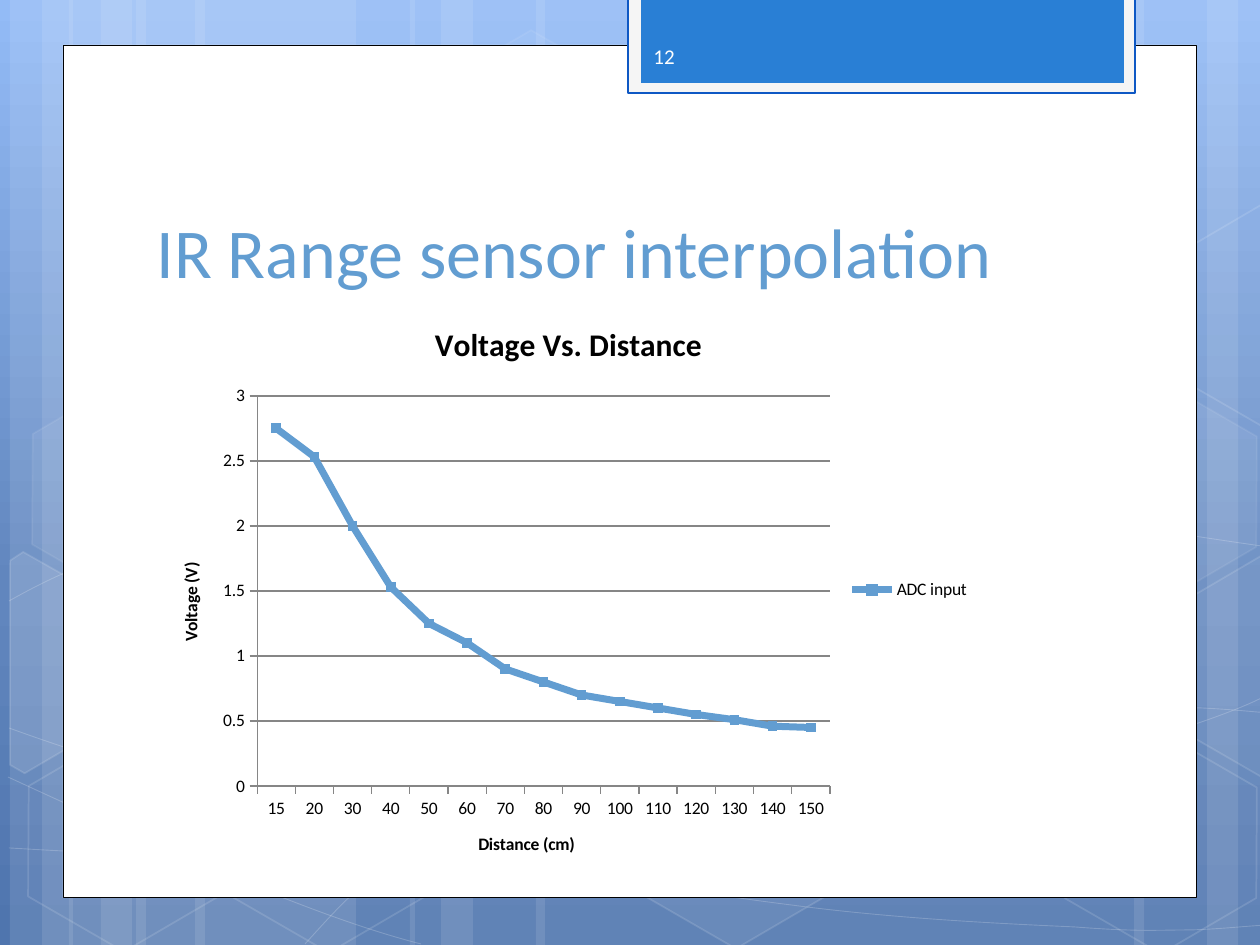
import copy
import dataclasses
import pptx
import pptx.chart.data
import pptx.dml.color
import pptx.enum.chart
import pptx.enum.shapes
import pptx.enum.text
import pptx.oxml.ns
import pptx.util


@dataclasses.dataclass
class Theme:
    sky: tuple = ((0, "93BBF6"), (0.62, "6186BE"), (1, "4F75AE"))
    white: str = "FFFFFF"
    black: str = "000000"
    frame: str = "F5F5F5"
    edge: str = "0E58C4"
    tab: str = "297FD5"
    page: str = "FEFEFE"
    accent: str = "629DD1"
    grid: str = "868686"
    font: str = "Calibri"
    head: int = 40
    name: int = 18
    num: int = 12
    small: int = 10


theme = Theme()
PX = 914400 / 126
RGB = pptx.dml.color.RGBColor.from_string
KIND = pptx.enum.shapes.MSO_SHAPE
ANCHOR = pptx.enum.text.MSO_ANCHOR
qn = pptx.oxml.ns.qn


def write(frame, text, size, color, bold=False, anchor=None):
    frame.text = text
    para = frame.paragraphs[0]
    if anchor is not None:
        frame.word_wrap = True
        frame.vertical_anchor = anchor
        para.alignment = pptx.enum.text.PP_ALIGN.LEFT
    font = para.runs[0].font
    font.name, font.size, font.bold = theme.font, pptx.util.Pt(size), bold
    font.color.rgb = RGB(color)


def paint(shape, fill=None, alpha=100, line=None, width=1, fade=100):
    shape.shadow.inherit = False
    for part, color, share in ((shape.fill, fill, alpha), (shape.line.fill, line, fade)):
        if color is None or share == 0:
            part.background()
            continue
        part.solid()
        part.fore_color.rgb = RGB(color)
        if share < 100:
            root = shape._element.spPr if part is shape.fill else shape.line._ln
            tone = root.find(qn("a:solidFill")).find(qn("a:srgbClr"))
            tone.append(tone.makeelement(qn("a:alpha"), {"val": str(share * 1000)}))
    if line:
        shape.line.width = pptx.util.Pt(width)


deck = pptx.Presentation()
deck.slide_width, deck.slide_height = round(1260 * PX), round(945 * PX)
slide = deck.slides.add_slide(deck.slide_layouts[5])
shapes = slide.shapes

# Background gradient, top to bottom
back = slide.background.fill
back.gradient()
back.gradient_angle = 270
stops = slide._element.find(".//" + qn("a:gsLst"))
stops.append(copy.deepcopy(stops[-1]))
for stop, (pos, color) in zip(back.gradient_stops, theme.sky):
    stop.position = pos
    stop.color.rgb = RGB(color)

# Pale vertical bands: left, width
bands = [(136, 220), (10, 63), (42, 104), (195, 220), (69, 63), (101, 104),
         (924, 220), (1207, 63), (1134, 104), (536, 388), (410, 63), (441, 104)]
for left, wide in bands:
    band = shapes.add_shape(KIND.RECTANGLE, *(round(v * PX) for v in (left, 0, wide, 945)))
    band.rotation = 180 if left > 900 else 0
    paint(band, theme.white, alpha=10)

# Thin curves: a start, then cubic steps (two controls, end) or straight ones
curves = [
    ((9, 848), [(77, 852, 145, 856, 239, 854), (334, 853, 451, 851, 577, 838),
                (703, 825, 882, 801, 998, 777), (1113, 753, 1231, 716, 1269, 694)]),
    ((9, 601), [(45, 581, 82, 562, 152, 543), (224, 524, 326, 496, 437, 488),
                (549, 479, 685, 478, 824, 488), (963, 498, 1193, 537, 1269, 547)]),
    ((8, 777), [(160, 847, 311, 916, 421, 944)]),
    ((9, 728), [(48, 742, 88, 756, 161, 776), (234, 795, 344, 827, 450, 848),
                (554, 869, 687, 892, 791, 905), (896, 919, 1008, 924, 1075, 927),
                (1140, 932, 1158, 930, 1191, 930), (1223, 929, 1246, 926, 1269, 925)]),
    ((305, 944), [(328, 919, 350, 893, 381, 871), (412, 848, 454, 823, 489, 805),
                  (524, 788, 546, 780, 592, 767), (638, 754, 722, 737, 766, 728),
                  (811, 719, 818, 719, 857, 717), (896, 713, 958, 709, 1000, 708),
                  (1045, 707, 1116, 708, 1116, 708), (1201, 708),
                  (1223, 709, 1245, 711, 1256, 712), (1268, 713, 1264, 712, 1268, 713)]),
]
for start, steps in curves:
    pen = shapes.build_freeform(*start, scale=PX)
    pen.add_line_segments([dot for step in steps for dot in zip(step[::2], step[1::2])],
                          close=False)
    curve = pen.convert_to_shape()
    paint(curve, line=theme.white, width=0.5, fade=20)
    track = curve._element.find(".//" + qn("a:path"))
    lines = iter(track.findall(qn("a:lnTo")))
    for step in steps:
        legs = [next(lines) for _ in step[::2]]
        if len(legs) == 3:
            bend = track.makeelement(qn("a:cubicBezTo"), {})
            legs[0].addprevious(bend)
            for leg in legs:
                bend.append(leg[0])
                track.remove(leg)

# Hexagons: left, top, fill alpha, line alpha
cells = [(421, 45, 4, 8), (626, 742, 6, 12), (14, 745, 0, 12), (18, 393, 7, 8),
         (219, 746, 0, 12), (949, 571, 10, 12), (1051, 747, 0, 12), (1051, 396, 7, 8)]
for left, top, alpha, fade in cells:
    cell = shapes.add_shape(KIND.HEXAGON, *(round(v * PX) for v in (left, top, 220, 192)))
    cell.adjustments[0] = 0.285
    cell.rotation = 30
    paint(cell, theme.white, alpha=alpha, line=theme.white, fade=fade)

# Hexagons cut by the slide edge: left, top, fill alpha, outline
west = [(0, 15), (7, 1), (119, 0), (173, 97), (119, 192), (102, 192)]
east = [(0, 95), (54, 0), (66, 0), (171, 182), (166, 191), (55, 191)]
for left, top, alpha, dots in ((-42, 578, 10, west), (1155, 559, 4, east), (1155, 208, 0, east)):
    dots = [(left + x, top + y) for x, y in dots]
    pen = shapes.build_freeform(*dots[0], scale=PX)
    pen.add_line_segments(dots[1:], close=True)
    cell = pen.convert_to_shape()
    cell.rotation = 30
    paint(cell, theme.white, alpha=alpha, line=theme.white, fade=12)

# White page and the tab at its top
plates = [((63, 45, 1134, 853), theme.white, theme.black, 0.5),
          ((628, -2, 507, 95), theme.frame, theme.edge, 1.25),
          ((641, -2, 483, 85), theme.tab, None, 0)]
for place, fill, line, width in plates:
    plate = shapes.add_shape(KIND.RECTANGLE, *(round(v * PX) for v in place))
    paint(plate, fill, line=line, width=width)

# Title, moved in front of the page
title = shapes.title
shapes._spTree.append(title._element)
title.left, title.top, title.width, title.height = (
    round(v * PX) for v in (144, 141, 968, 158))
write(title.text_frame, "IR Range sensor interpolation", theme.head, theme.accent,
      anchor=ANCHOR.BOTTOM)

# Page number
page = shapes.add_textbox(*(round(v * PX) for v in (641, 31, 184, 50)))
write(page.text_frame, "12", theme.num, theme.page, anchor=ANCHOR.MIDDLE)

# Line chart
data = pptx.chart.data.CategoryChartData()
data.categories = ["15", "20"] + [str(n) for n in range(30, 151, 10)]
data.add_series("ADC input", [2.75, 2.53, 2, 1.53, 1.25, 1.1, 0.9, 0.8, 0.7,
                              0.65, 0.6, 0.55, 0.51, 0.46, 0.45])
chart = shapes.add_chart(pptx.enum.chart.XL_CHART_TYPE.LINE_MARKERS,
                         *(round(v * PX) for v in (154, 299, 829, 582)), data).chart
chart.font.name, chart.font.size = theme.font, pptx.util.Pt(theme.small)
chart.font.color.rgb = RGB(theme.black)
write(chart.chart_title.text_frame, "Voltage Vs. Distance", theme.name, theme.black, bold=True)
chart.has_legend = True
chart.legend.position = pptx.enum.chart.XL_LEGEND_POSITION.RIGHT
chart.legend.include_in_layout = False

# Axes and grid
chart.value_axis.has_major_gridlines = True
rules = [chart.value_axis.major_gridlines.format.line]
for axis, label in ((chart.category_axis, "Distance (cm)"), (chart.value_axis, "Voltage (V)")):
    write(axis.axis_title.text_frame, label, theme.small, theme.black, bold=True)
    axis.major_tick_mark = pptx.enum.chart.XL_TICK_MARK.OUTSIDE
    rules.append(axis.format.line)
for rule in rules:
    rule.color.rgb = RGB(theme.grid)
    rule.width = pptx.util.Pt(0.75)

# Series line and square markers
chart.plots[0].vary_by_categories = False
volts = chart.plots[0].series[0]
volts.smooth = False
volts.format.line.color.rgb = RGB(theme.accent)
volts.format.line.width = pptx.util.Pt(4)
volts.marker.style = pptx.enum.chart.XL_MARKER_STYLE.SQUARE
volts.marker.size = 5
volts.marker.format.fill.solid()
volts.marker.format.fill.fore_color.rgb = RGB(theme.accent)
volts.marker.format.line.color.rgb = RGB(theme.accent)

deck.save("out.pptx")
